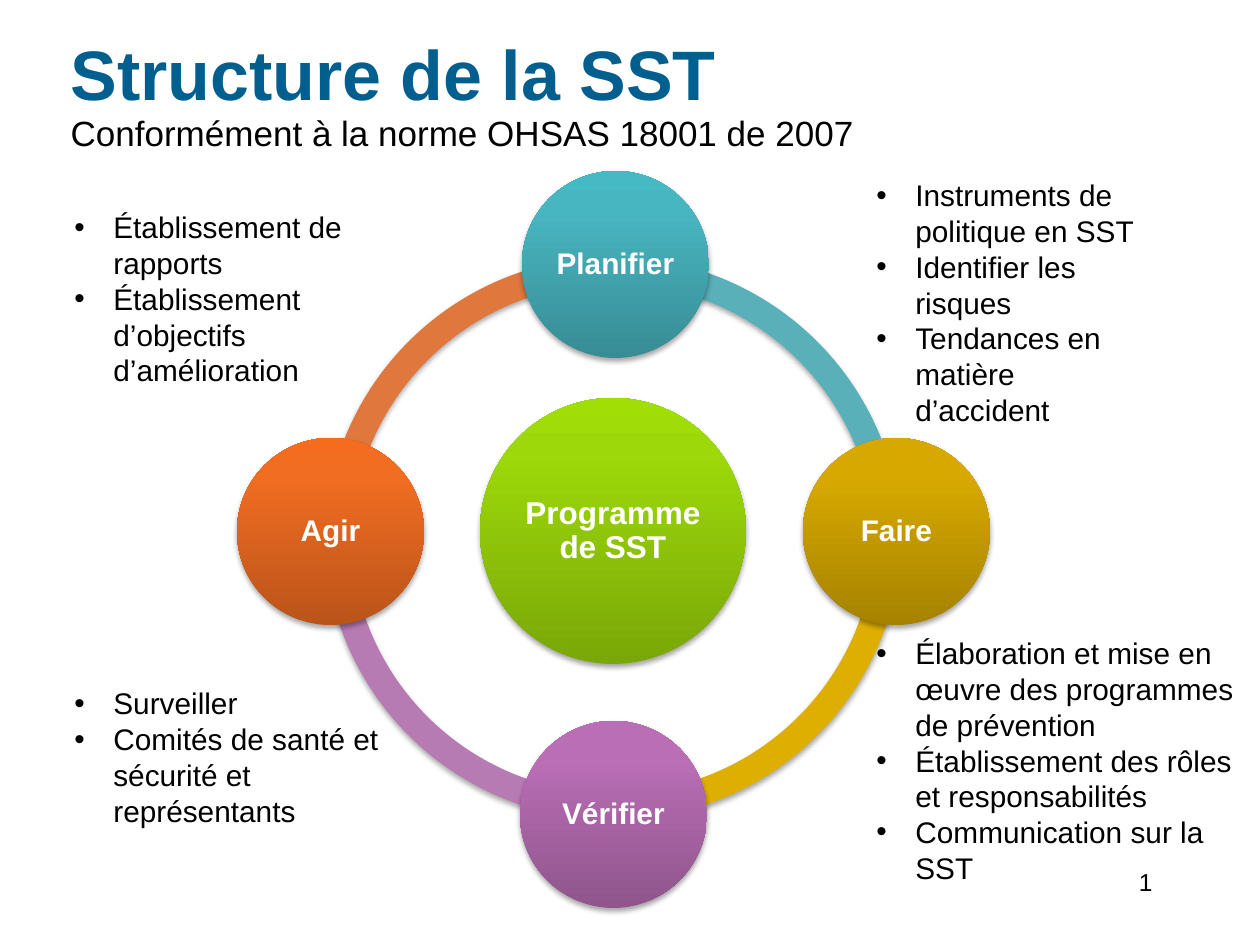
from copy import deepcopy

from lxml import etree
from pptx import Presentation
from pptx.dml.color import RGBColor
from pptx.enum.shapes import MSO_SHAPE
from pptx.enum.text import MSO_ANCHOR, MSO_AUTO_SIZE, PP_ALIGN
from pptx.oxml.ns import qn
from pptx.util import Emu, Pt

ARC, OVAL = MSO_SHAPE.BLOCK_ARC, MSO_SHAPE.OVAL
LEFT, CENTER, RIGHT = PP_ALIGN.LEFT, PP_ALIGN.CENTER, PP_ALIGN.RIGHT
MIDDLE = MSO_ANCHOR.MIDDLE
FIT_SHAPE, NO_FIT = MSO_AUTO_SIZE.SHAPE_TO_FIT_TEXT, MSO_AUTO_SIZE.NONE

FONT = "Arial"
BLACK, WHITE, TITLE_BLUE = "000000", "FFFFFF", "005F8E"
RING_LEFT, RING_SIZE, RING_THICKNESS = 324, 578, 0.046
STEP_SIZE, CORE_SIZE = 187, 266
BULLET_INDENT = 39

# top, start and end angle in degrees, colour
ARCS = [
    (257, 183.07, 270.44, "E0773C"),
    (242, 90, 180, "B77BB4"),
    (242, 0, 90, "DEAE00"),
    (257, 270.27, 356.93, "59B0B9"),
]
# label, left, top, diameter, text size, inset, colours from bottom to top
CIRCLES = [
    ("Programme de SST", 480, 398, CORE_SIZE, 18, 4, ("79A708", "9DD90A", "A0DE06")),
    ("Planifier", 522, 171, STEP_SIZE, 17, 3, ("388C95", "48B6C1", "46B9C4")),
    ("Faire", 803, 438, STEP_SIZE, 17, 3, ("A68200", "D7A900", "D8A900")),
    ("Vérifier", 520, 721, STEP_SIZE, 17, 3, ("8F558C", "BA6EB6", "BC6EB8")),
    ("Agir", 237, 438, STEP_SIZE, 17, 3, ("BA541A", "F16D22", "F66C1E")),
]
# left, top, width, height, items
LISTS = [
    (864, 171, 302, 265, ["Instruments de politique en SST", "Identifier les risques",
                          "Tendances en matière d’accident"]),
    (62, 679, 378, 158, ["Surveiller",
                         "Comités de santé et sécurité et représentants"]),
    (864, 629, 396, 265, ["Élaboration et mise en œuvre des programmes de prévention",
                          "Établissement des rôles et responsabilités",
                          "Communication sur la SST"]),
    (62, 203, 328, 193, ["Établissement de rapports",
                         "Établissement d’objectifs d’amélioration"]),
]


def px(length):
    return Emu(round(length * 914400 / 126))


def color(value):
    return RGBColor.from_string(value)


def set_font(font, size, value, bold=False):
    font.name, font.size, font.bold = FONT, Pt(size), bold
    font.color.rgb = color(value)


def add_shape(page, kind, left, top, size):
    """Add a square-framed shape without outline and with a soft shadow."""
    shape = page.shapes.add_shape(kind, px(left), px(top), px(size), px(size))
    shape.line.fill.background()
    shape.shadow.inherit = False
    effects = shape._element.spPr.find(qn("a:effectLst"))
    shadow = etree.SubElement(effects, qn("a:outerShdw"), blurRad=str(Pt(3.1)),
                              dist=str(Pt(1.8)), dir="5400000", rotWithShape="0")
    black = etree.SubElement(shadow, qn("a:srgbClr"), val=BLACK)
    etree.SubElement(black, qn("a:alpha"), val="35000")
    return shape


def add_arc(page, top, start, end, value):
    arc = add_shape(page, ARC, RING_LEFT, top, RING_SIZE)
    # An adjustment of 1 stands for 100000 units of 1/60000 degree
    arc.adjustments[0] = start * 0.6
    arc.adjustments[1] = end * 0.6
    arc.adjustments[2] = RING_THICKNESS
    arc.fill.solid()
    arc.fill.fore_color.rgb = color(value)


def fill_gradient(shape, values):
    """Fill from bottom to top with three colours."""
    shape.fill.gradient()
    shape.fill.gradient_angle = 90
    stop_list = shape._element.spPr.find(qn("a:gradFill")).find(qn("a:gsLst"))
    stop_list.insert(1, deepcopy(stop_list[0]))
    for stop, position, value in zip(shape.fill.gradient_stops, (0, 0.8, 1), values):
        stop.position = position
        stop.color.rgb = color(value)


def add_circle(page, label, left, top, diameter, size, inset, values):
    circle = add_shape(page, OVAL, left, top, diameter)
    fill_gradient(circle, values)
    frame = circle.text_frame
    frame.text = label
    frame.word_wrap = True
    frame.vertical_anchor = MIDDLE
    frame.margin_left = frame.margin_right = px(inset)
    frame.margin_top = frame.margin_bottom = px(inset)
    para = frame.paragraphs[0]
    para.alignment, para.line_spacing = CENTER, 0.9
    set_font(para.runs[0].font, size, WHITE, bold=True)


def add_text_box(page, left, top, width, height):
    box = page.shapes.add_textbox(px(left), px(top), px(width), px(height))
    box.text_frame.word_wrap = True
    return box.text_frame


def add_list(page, left, top, width, height, items):
    frame = add_text_box(page, left, top, width, height)
    frame.auto_size = FIT_SHAPE
    frame.text = "\n".join(items)
    for para in frame.paragraphs:
        props = para._p.get_or_add_pPr()
        props.set("marL", str(px(BULLET_INDENT)))
        props.set("indent", str(px(-BULLET_INDENT)))
        etree.SubElement(props, qn("a:buFont"), typeface=FONT)
        etree.SubElement(props, qn("a:buChar"), char="•")
        set_font(para.runs[0].font, 17, BLACK)


def set_title(page):
    title = page.shapes.title
    title.left, title.top, title.width, title.height = map(px, (58, 18, 1134, 158))
    frame = title.text_frame
    frame.text = "Structure de la SST\vConformément à la norme OHSAS 18001 de 2007"
    frame.auto_size, frame.vertical_anchor = NO_FIT, MIDDLE
    para = frame.paragraphs[0]
    para.alignment, para.line_spacing = LEFT, 0.9
    heading, subtitle = para.runs
    set_font(heading.font, 40, TITLE_BLUE, bold=True)
    set_font(subtitle.font, 20, BLACK)


def add_page_number(page, number):
    frame = add_text_box(page, 903, 861, 262, 63)
    para = frame.paragraphs[0]
    para.alignment = RIGHT
    span = para.add_run()
    span.text = number
    set_font(span.font, 14, BLACK)
    field = etree.SubElement(para._p, qn("a:fld"), type="slidenum",
                             id="{B6F15528-21DE-4FAA-801E-634DDDAF4B2B}")
    field.extend(list(span._r))
    para._p.remove(span._r)


def main():
    deck = Presentation()
    deck.slide_width, deck.slide_height = px(1260), px(945)
    page = deck.slides.add_slide(deck.slide_layouts[5])
    set_title(page)
    add_page_number(page, "4")
    for arc in ARCS:
        add_arc(page, *arc)
    for circle in CIRCLES:
        add_circle(page, *circle)
    for bullet_list in LISTS:
        add_list(page, *bullet_list)
    deck.save("out.pptx")


if __name__ == "__main__":
    main()
